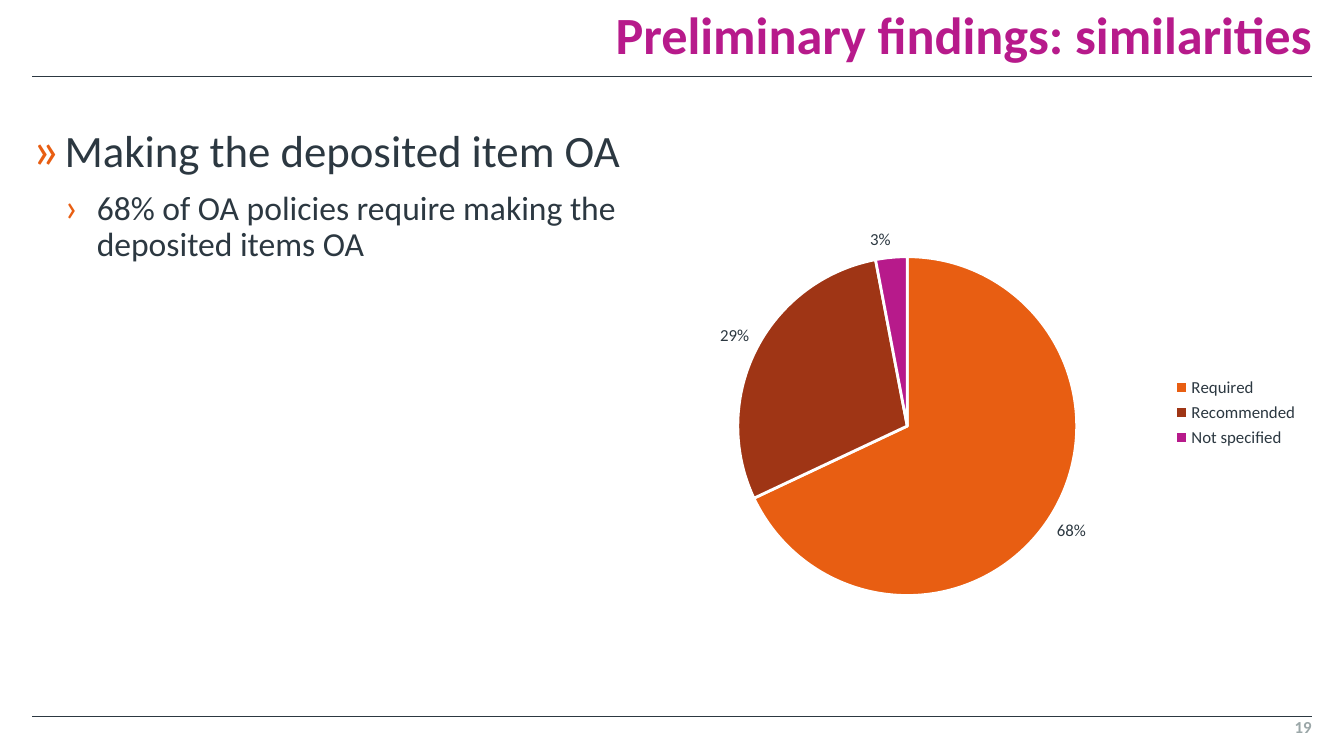
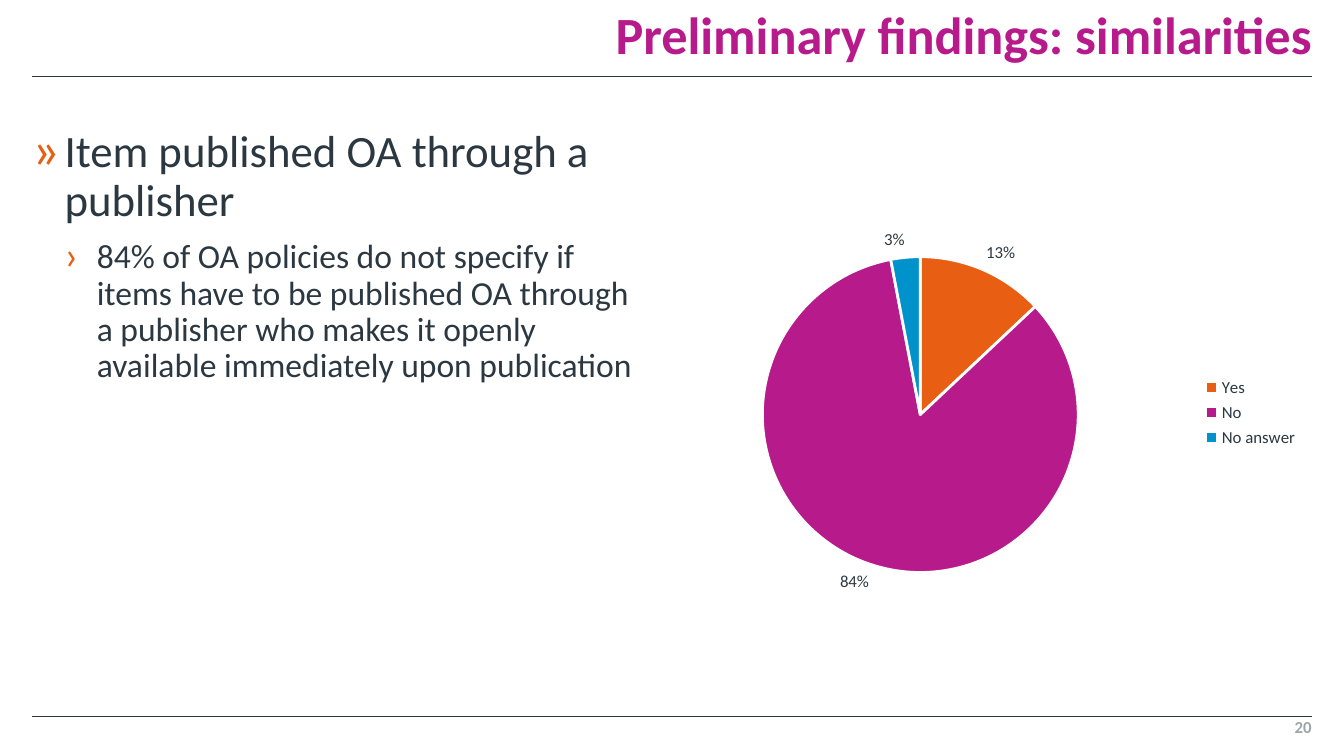
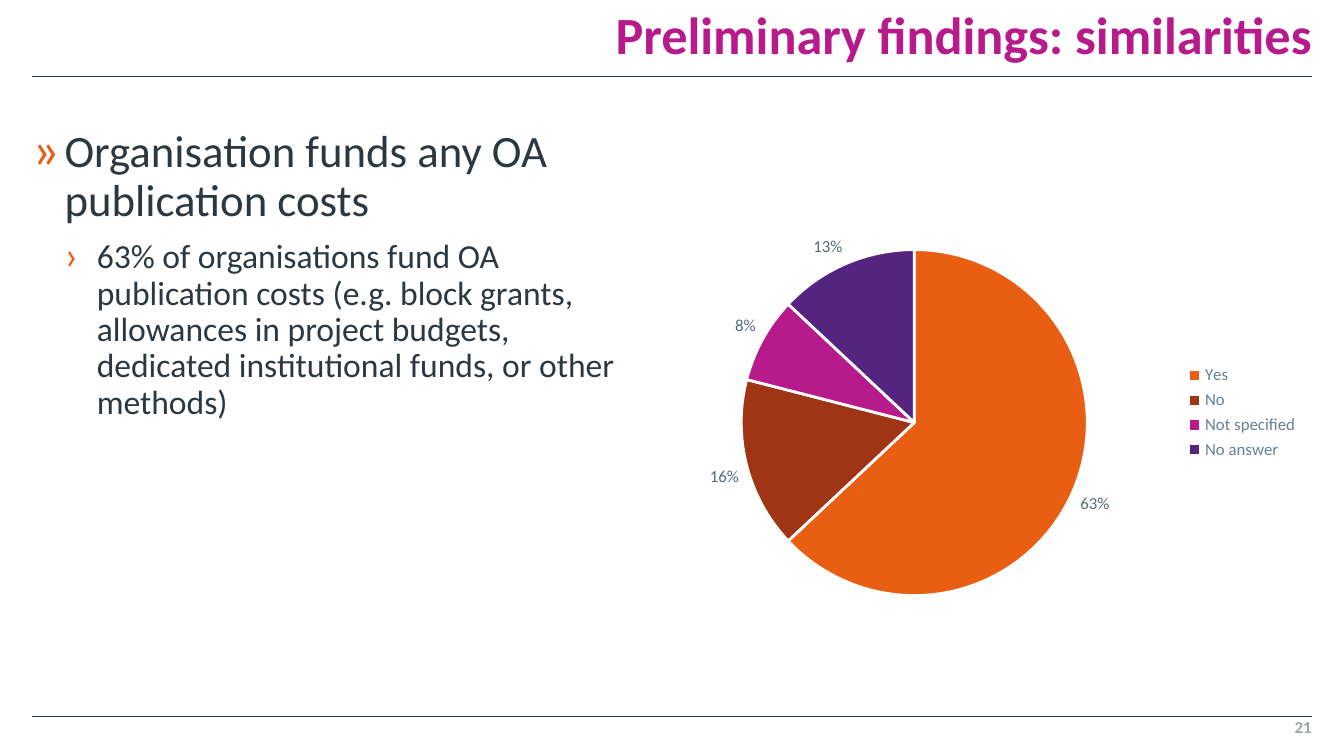
from dataclasses import dataclass
from typing import NamedTuple

from lxml import etree
from pptx import Presentation, util as u
from pptx.chart.data import CategoryChartData
from pptx.dml.color import RGBColor
from pptx.enum import chart as ch, shapes, text as tx
from pptx.oxml import ns

INK = RGBColor(0x2C, 0x38, 0x41)
SLATE = RGBColor(0x54, 0x6C, 0x7D)
STEEL = RGBColor(0x65, 0x80, 0x95)
GREY = RGBColor(0x9B, 0xA7, 0xA8)
WHITE = RGBColor(0xFF, 0xFF, 0xFF)
ORANGE = RGBColor(0xE8, 0x5E, 0x12)
RUST = RGBColor(0x9F, 0x35, 0x15)
PINK = RGBColor(0xB7, 0x1A, 0x8B)
BLUE = RGBColor(0x00, 0x92, 0xCB)
PURPLE = RGBColor(0x55, 0x24, 0x81)

FACE = "Calibri"
TITLE = "Preliminary findings: similarities"
FIRST = 19
WIDE = u.Inches(10)
HIGH = WIDE * 9 // 16
INDENT = u.Inches(0.24)


class Box(NamedTuple):
    """A place on the slide, in percent of its width and height."""
    left: float
    top: float
    width: float
    height: float


LEFT, RIGHT = 2.4, 97.6
RULES = (10.13, 94.76)
HEAD = Box(30.3, 0, RIGHT - 30.3, 8.71)
BODY = Box(LEFT, 17.07, 44.9, 74.84)
PAGE = Box(89.8, RULES[1], RIGHT - 89.8, 3.2)
PIE = Box(47.6, 27.91, 50, 53.33)


class Slice(NamedTuple):
    name: str
    share: int
    color: RGBColor


@dataclass
class Finding:
    topic: str
    detail: str
    slices: list[Slice]
    label: RGBColor = INK
    key: RGBColor = INK


FINDINGS = [
    Finding(
        "Making the deposited item OA",
        "68% of OA policies require making the deposited items OA",
        [Slice("Required", 68, ORANGE), Slice("Recommended", 29, RUST),
         Slice("Not specified", 3, PINK)]),
    Finding(
        "Item published OA through a publisher",
        "84% of OA policies do not specify if items have to be published OA "
        "through a publisher who makes it openly available immediately upon "
        "publication",
        [Slice("Yes", 13, ORANGE), Slice("No", 84, PINK),
         Slice("No answer", 3, BLUE)]),
    Finding(
        "Organisation funds any OA publication costs",
        "63% of organisations fund OA publication costs (e.g. block grants, "
        "allowances in project budgets, dedicated institutional funds, or "
        "other methods)",
        [Slice("Yes", 63, ORANGE), Slice("No", 16, RUST),
         Slice("Not specified", 8, PINK), Slice("No answer", 13, PURPLE)],
        label=SLATE, key=STEEL),
]


def across(share: float) -> int:
    return round(WIDE * share / 100)


def down(share: float) -> int:
    return round(HIGH * share / 100)


def place(box: Box) -> tuple[int, int, int, int]:
    return (across(box.left), down(box.top),
            across(box.width), down(box.height))


def style(font, size: float, color: RGBColor, bold: bool = False) -> None:
    font.name, font.size, font.bold = FACE, u.Pt(size), bold
    font.color.rgb = color


def clear(frame, anchor=tx.MSO_ANCHOR.TOP) -> None:
    """Give a text frame wrapping, no margins and a fixed size."""
    frame.word_wrap = True
    frame.auto_size = tx.MSO_AUTO_SIZE.NONE
    frame.vertical_anchor = anchor
    frame.margin_left = frame.margin_right = 0
    frame.margin_top = frame.margin_bottom = 0


def mark(para, char: str, level: int) -> None:
    """Add an orange hanging bullet."""
    para.level = level
    props = para._p.get_or_add_pPr()
    props.set("marL", str(INDENT * (level + 1)))
    props.set("indent", str(-INDENT))
    color = etree.SubElement(props, ns.qn("a:buClr"))
    etree.SubElement(color, ns.qn("a:srgbClr"), val=str(ORANGE))
    etree.SubElement(props, ns.qn("a:buSzPct"), val="120000")
    etree.SubElement(props, ns.qn("a:buFont"), typeface=FACE)
    etree.SubElement(props, ns.qn("a:buChar"), char=char)


def write(frame, words: str, *, size: float, color: RGBColor = INK,
          bold: bool = False, align=tx.PP_ALIGN.LEFT, lead: float = 1.0,
          gap: float = 0, bullet: str = "", level: int = 0) -> None:
    """Fill the frame's first paragraph, or add one below."""
    para = frame.paragraphs[0] if not frame.text else frame.add_paragraph()
    if bullet:
        mark(para, bullet, level)
    para.alignment, para.line_spacing = align, lead
    para.space_before = u.Pt(gap)
    run = para.add_run()
    run.text = words
    style(run.font, size, color, bold)


def rule(slide, row: float) -> None:
    line = slide.shapes.add_connector(
        shapes.MSO_CONNECTOR.STRAIGHT,
        across(LEFT), down(row), across(RIGHT), down(row))
    line.line.color.rgb, line.line.width = INK, u.Pt(0.5)
    etree.SubElement(line._element.spPr, ns.qn("a:effectLst"))


def frame(slide, page: int) -> None:
    """Draw what all slides share: rules, title and page number."""
    for row in RULES:
        rule(slide, row)
    head = slide.shapes.title
    head.left, head.top, head.width, head.height = place(HEAD)
    clear(head.text_frame, tx.MSO_ANCHOR.BOTTOM)
    write(head.text_frame, TITLE, size=28, color=PINK, bold=True,
          align=tx.PP_ALIGN.RIGHT, lead=0.9)
    foot = slide.shapes.add_textbox(*place(PAGE)).text_frame
    clear(foot)
    write(foot, str(page), size=9, color=GREY, bold=True,
          align=tx.PP_ALIGN.RIGHT)


def points(slide, find: Finding) -> None:
    body = slide.shapes.add_textbox(*place(BODY)).text_frame
    clear(body)
    write(body, find.topic, size=24, lead=0.9, bullet="»")
    write(body, find.detail, size=18, lead=0.9, gap=7.5, bullet="›", level=1)


def pie(slide, find: Finding) -> None:
    data = CategoryChartData()
    data.categories = [part.name for part in find.slices]
    data.add_series("Series 1", [part.share for part in find.slices])
    chart = slide.shapes.add_chart(
        ch.XL_CHART_TYPE.PIE, *place(PIE), data).chart
    style(chart.font, 10, INK)
    chart.has_title = False
    chart.has_legend = True
    chart.legend.position = ch.XL_LEGEND_POSITION.RIGHT
    chart.legend.include_in_layout = False
    style(chart.legend.font, 9, find.key)

    plot = chart.plots[0]
    plot.vary_by_categories = True
    for i, part in enumerate(find.slices):
        form = plot.series[0].points[i].format
        form.fill.solid()
        form.fill.fore_color.rgb = part.color
        form.line.color.rgb, form.line.width = WHITE, u.Pt(1.5)

    tags = plot.series[0].data_labels
    tags.show_value, tags.show_percentage = False, True
    tags.number_format, tags.number_format_is_linked = "0%", False
    tags.position = ch.XL_LABEL_POSITION.OUTSIDE_END
    style(tags.font, 9, find.label)


def main() -> None:
    deck = Presentation()
    deck.slide_width, deck.slide_height = WIDE, HIGH
    plain = deck.slide_layouts.get_by_name("Title Only")
    for page, find in enumerate(FINDINGS, FIRST):
        slide = deck.slides.add_slide(plain)
        frame(slide, page)
        points(slide, find)
        pie(slide, find)
    deck.save("out.pptx")


if __name__ == "__main__":
    main()
